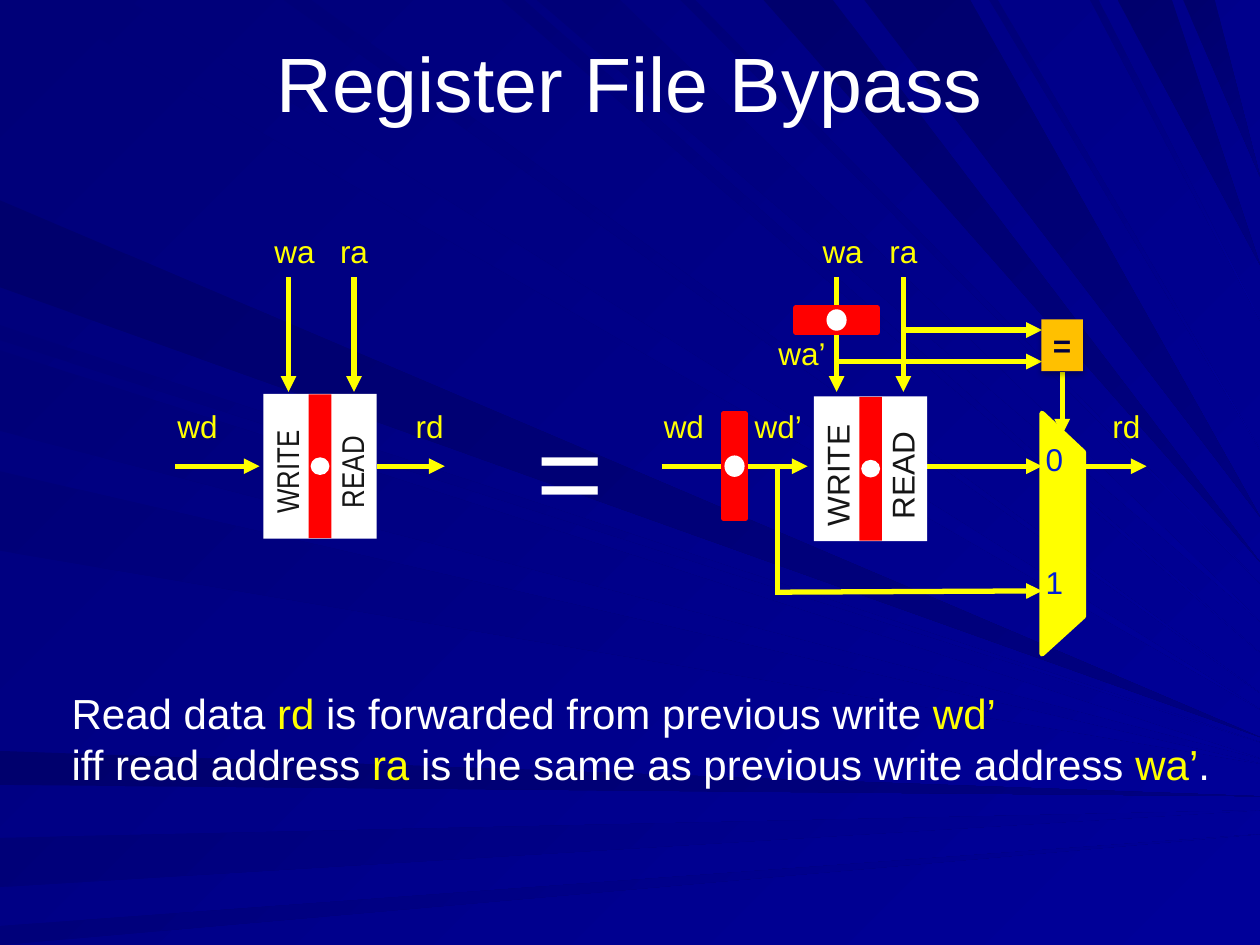
from dataclasses import dataclass
from typing import NamedTuple, Optional

from lxml import etree
from pptx import Presentation
from pptx import util as u
from pptx.dml.color import RGBColor
from pptx.enum import shapes, text
from pptx.oxml import parse_xml
from pptx.oxml.ns import nsdecls, qn

PX = u.Inches(1) // 100  # one px is a hundredth of an inch
SLIDE_WIDTH, SLIDE_HEIGHT = 1000, 750
WHITE = RGBColor.from_string("FFFFFF")
YELLOW = RGBColor.from_string("FFFF00")
RED = RGBColor.from_string("FF0000")
ORANGE = RGBColor.from_string("FFC000")
NAVY = RGBColor.from_string("000040")
BLUE = RGBColor.from_string("001DD6")
INK = RGBColor.from_string("161616")
SKY_DARK = RGBColor.from_string("000078")
SKY = RGBColor.from_string("000099")
SHADE_DARK = RGBColor.from_string("00006D")
SHADE = RGBColor.from_string("000080")
RECTANGLE, OVAL = shapes.MSO_SHAPE.RECTANGLE, shapes.MSO_SHAPE.OVAL


class Ray(NamedTuple):
    """A streak from a stretch of the left or top edge to a tip on the right edge."""
    start: int
    end: int
    tip: int
    bright: bool = True


class Wire(NamedTuple):
    x1: int
    y1: int
    x2: int
    y2: int
    arrow: bool = True


class Memory(NamedTuple):
    x: int
    y: int
    font: str
    read_width: int
    write_width: int


@dataclass
class Box:
    """A shape placed by its centre."""
    x: int
    y: int
    width: int
    height: int
    fill: RGBColor
    outlined: bool = False
    rotation: int = 0
    kind: shapes.MSO_SHAPE = RECTANGLE


@dataclass
class Label:
    words: str
    left: int
    top: int
    width: int
    height: int = 43
    color: RGBColor = YELLOW
    size: int = 18
    font: str = "Arial"
    rotation: int = 0


LEFT_RAYS = [
    Ray(596, 623, 632, False), Ray(665, 704, 643), Ray(735, 750, 662), Ray(258, 270, 589),
    Ray(159, 228, 585, False), Ray(278, 342, 602), Ray(374, 437, 606),
]
TOP_RAYS = [
    Ray(26, 101, 563), Ray(398, 416, 518), Ray(426, 492, 493), Ray(540, 552, 463),
    Ray(606, 661, 446, False), Ray(887, 930, 210, False), Ray(939, 964, 140, False),
    Ray(225, 247, 550), Ray(686, 770, 410, False), Ray(785, 792, 357), Ray(865, 872, 254),
]
ADDRESSES = {229: "wa", 281: "ra", 664: "wa", 717: "ra"}
DATA_LABELS = {131: "wd", 320: "rd", 517: "wd", 589: "wd’", 873: "rd"}
LABEL_WIDTHS = {"wa": 56, "ra": 45, "wd": 56, "rd": 45, "wd’": 62}
DATA_Y = 370
DATA_SPANS = [(139, 206), (299, 353), (525, 641), (735, 827), (860, 910)]
WIRES = [
    *(Wire(start, DATA_Y, end, DATA_Y) for start, end in DATA_SPANS),
    *(Wire(x, 220, x, 311) for x in ADDRESSES),
    Wire(843, 295, 843, 345), Wire(663, 287, 827, 287), Wire(717, 262, 827, 262),
    Wire(617, 368, 617, 472, arrow=False), Wire(616, 470, 827, 469),
]
MUX = [(827, 519), (860, 489), (860, 359), (827, 328)]
MEMORIES = [Memory(254, 370, "Arial Narrow", 85, 94), Memory(691, 372, "Arial", 99, 110)]
REGISTERS = [Box(583, 370, 17, 83, RED, True), Box(664, 254, 19, 65, RED, True, 270)]
LABELS = [
    *(Label(words, x - 21, 179, LABEL_WIDTHS[words]) for x, words in ADDRESSES.items()),
    *(Label(words, x, 318, LABEL_WIDTHS[words], 52) for x, words in DATA_LABELS.items()),
    Label("wa’", 608, 260, 62), Label("=", 416, 312, 74, 120, WHITE, 66),
    Label("0", 820, 344, 34, 40, BLUE), Label("1", 820, 442, 34, 40, BLUE),
]
# Every second piece of a line is a highlighted signal name.
SUMMARY = [
    ["Read data ", "rd", " is forwarded from previous write ", "wd’"],
    ["iff read address ", "ra", " is the same as previous write address ", "wa’", "."],
]
SHADOW = (f'<a:outerShdw {nsdecls("a")} blurRad="44450" dist="27940" dir="5400000" rotWithShape="0">'
          '<a:srgbClr val="000000"><a:alpha val="32000"/></a:srgbClr></a:outerShdw>')


def set_font(font, color: RGBColor, size: int, name: str = "Arial") -> None:
    font.name, font.size, font.color.rgb = name, u.Pt(size), color


def set_gradient(fill, start: RGBColor, end: RGBColor) -> None:
    """Fill from start at the top left to end at the bottom right."""
    fill.gradient()
    fill.gradient_angle = 315
    for stop, color in zip(fill.gradient_stops, (start, end)):
        stop.color.rgb = color


def style_shape(shape, fill: RGBColor, line: Optional[RGBColor]) -> None:
    shape.shadow.inherit = False
    shape.fill.solid()
    shape.fill.fore_color.rgb = fill
    if line is None:
        shape.line.fill.background()
    else:
        shape.line.color.rgb, shape.line.width = line, u.Pt(3)


def draw_polygon(target, points: list):
    builder = target.build_freeform(*points[0], scale=PX)
    builder.add_line_segments(points[1:], close=True)
    return builder.convert_to_shape()


def draw_backdrop(slide, master) -> None:
    """Group the rays and set them behind everything on the master."""
    set_gradient(master.background.fill, SKY_DARK, SKY)
    group = slide.shapes.add_group_shape()
    for ray in LEFT_RAYS + TOP_RAYS:
        edge = [(0, ray.start), (0, ray.end)]
        if ray in TOP_RAYS:
            edge = [(ray.start, 0), (ray.end, 0)]
        shape = draw_polygon(group.shapes, edge + [(SLIDE_WIDTH, ray.tip)])
        style_shape(shape, SKY, None)
        colors = (SKY_DARK, SKY) if ray.bright else (SHADE_DARK, SHADE)
        set_gradient(shape.fill, *colors)
    for number, properties in enumerate(group.element.iter(qn("p:cNvPr")), 100):
        properties.set("id", str(number))
    master.shapes.element.insert(2, group.element)


def draw_wire(slide, wire: Wire) -> None:
    ends = (value * PX for value in wire[:4])
    connector = slide.shapes.add_connector(shapes.MSO_CONNECTOR.STRAIGHT, *ends)
    connector.line.color.rgb, connector.line.width = YELLOW, u.Pt(3)
    properties = connector.element.spPr
    if wire.arrow:
        etree.SubElement(properties.find(qn("a:ln")), qn("a:tailEnd"), type="triangle")
    etree.SubElement(properties, qn("a:effectLst"))


def draw_box(slide, box: Box):
    width, height = box.width * PX, box.height * PX
    left, top = box.x * PX - width // 2, box.y * PX - height // 2
    shape = slide.shapes.add_shape(box.kind, left, top, width, height)
    shape.rotation = box.rotation
    style_shape(shape, box.fill, box.fill if box.outlined else None)
    return shape


def draw_comparator(slide) -> None:
    shape = draw_box(slide, Box(843, 274, 33, 41, ORANGE))
    shape.element.spPr.find(qn("a:effectLst")).append(parse_xml(SHADOW))
    frame = shape.text_frame
    frame.text, frame.word_wrap = "=", False
    frame.vertical_anchor = text.MSO_ANCHOR.MIDDLE
    frame.paragraphs[0].alignment = text.PP_ALIGN.CENTER
    font = frame.paragraphs[0].runs[0].font
    set_font(font, NAVY, 18)
    font.bold = True


def add_text_frame(slide, left: int, top: int, width: int, height: int, rotation: int = 0):
    shape = slide.shapes.add_textbox(left * PX, top * PX, width * PX, height * PX)
    shape.rotation = rotation
    shape.text_frame.word_wrap = False
    shape.text_frame.auto_size = text.MSO_AUTO_SIZE.SHAPE_TO_FIT_TEXT
    return shape.text_frame


def draw_label(slide, label: Label) -> None:
    frame = add_text_frame(
        slide, label.left, label.top, label.width, label.height, label.rotation)
    frame.text = label.words
    set_font(frame.paragraphs[0].runs[0].font, label.color, label.size, label.font)


def draw_memory(slide, memory: Memory) -> None:
    draw_box(slide, Box(memory.x, memory.y, 115, 90, WHITE, rotation=270))
    draw_box(slide, Box(memory.x, memory.y, 114, 18, RED, rotation=270))
    draw_box(slide, Box(memory.x, memory.y, 15, 14, WHITE, kind=OVAL))
    sides = [("READ", 26, memory.read_width), ("WRITE", -25, memory.write_width)]
    for words, offset, width in sides:
        draw_label(slide, Label(words, memory.x + offset - width // 2, memory.y - 21, width,
                                color=INK, font=memory.font, rotation=270))


def draw_summary(slide) -> None:
    frame = add_text_frame(slide, 47, 541, 925, 90)
    for number, pieces in enumerate(SUMMARY):
        paragraph = frame.add_paragraph() if number else frame.paragraphs[0]
        for index, piece in enumerate(pieces):
            run = paragraph.add_run()
            run.text = piece
            set_font(run.font, YELLOW if index % 2 else WHITE, 24)


def draw_title(slide) -> None:
    title = slide.shapes.title
    title.left, title.top, title.width, title.height = 50 * PX, 2 * PX, 900 * PX, 125 * PX
    title.text_frame.text = "Register File Bypass"
    title.text_frame.vertical_anchor = text.MSO_ANCHOR.MIDDLE
    paragraph = title.text_frame.paragraphs[0]
    paragraph.alignment = text.PP_ALIGN.CENTER
    set_font(paragraph.runs[0].font, WHITE, 44)


def main() -> None:
    presentation = Presentation()
    presentation.slide_width, presentation.slide_height = SLIDE_WIDTH * PX, SLIDE_HEIGHT * PX
    slide = presentation.slides.add_slide(presentation.slide_layouts[5])
    draw_backdrop(slide, presentation.slide_master)
    draw_title(slide)
    for wire in WIRES:
        draw_wire(slide, wire)
    draw_comparator(slide)
    style_shape(draw_polygon(slide.shapes, MUX), YELLOW, YELLOW)
    for memory in MEMORIES:
        draw_memory(slide, memory)
    for register in REGISTERS:
        draw_box(slide, register)
        draw_box(slide, Box(register.x, register.y, 16, 17, WHITE, kind=OVAL))
    for label in LABELS:
        draw_label(slide, label)
    draw_summary(slide)
    presentation.save("out.pptx")


if __name__ == "__main__":
    main()
